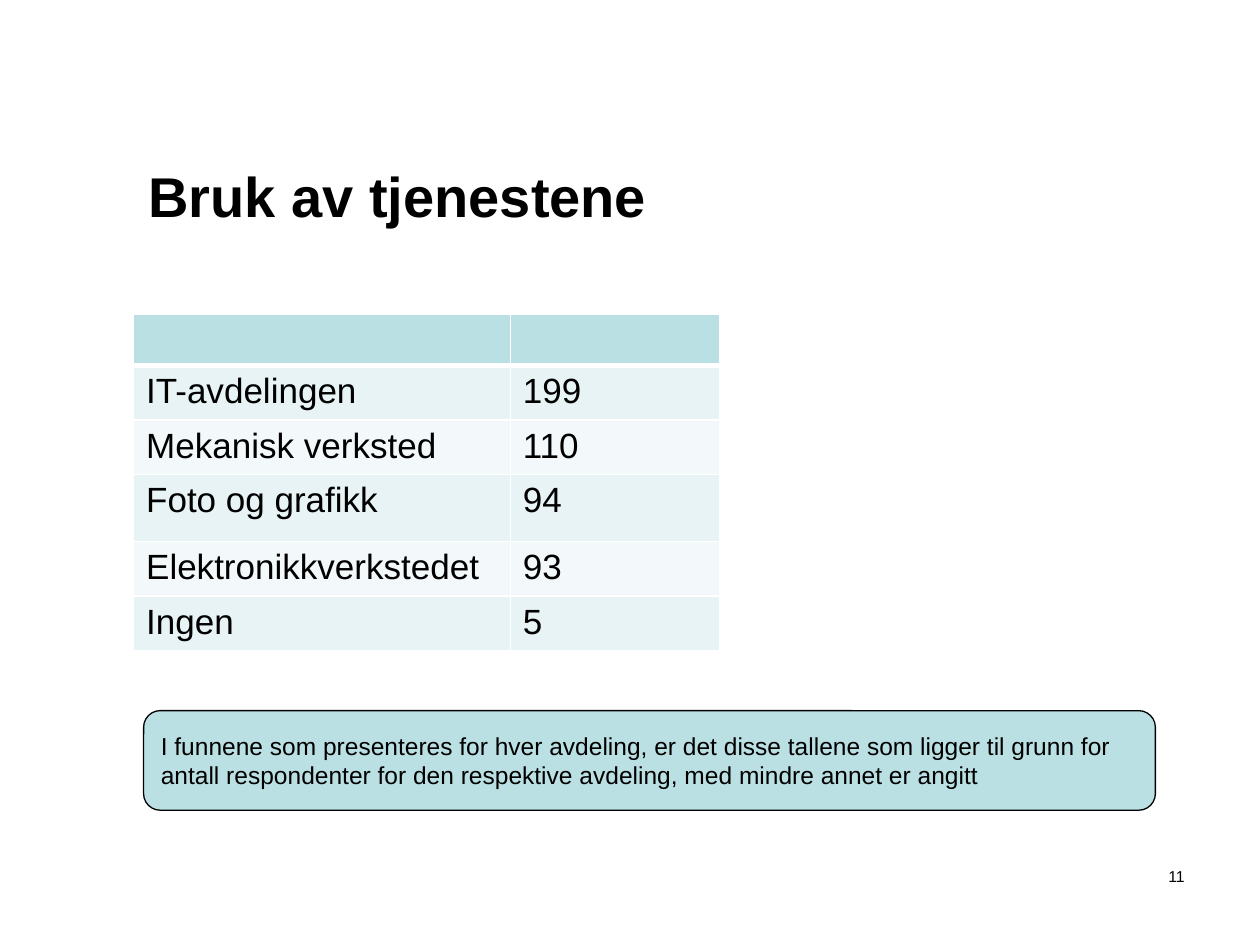
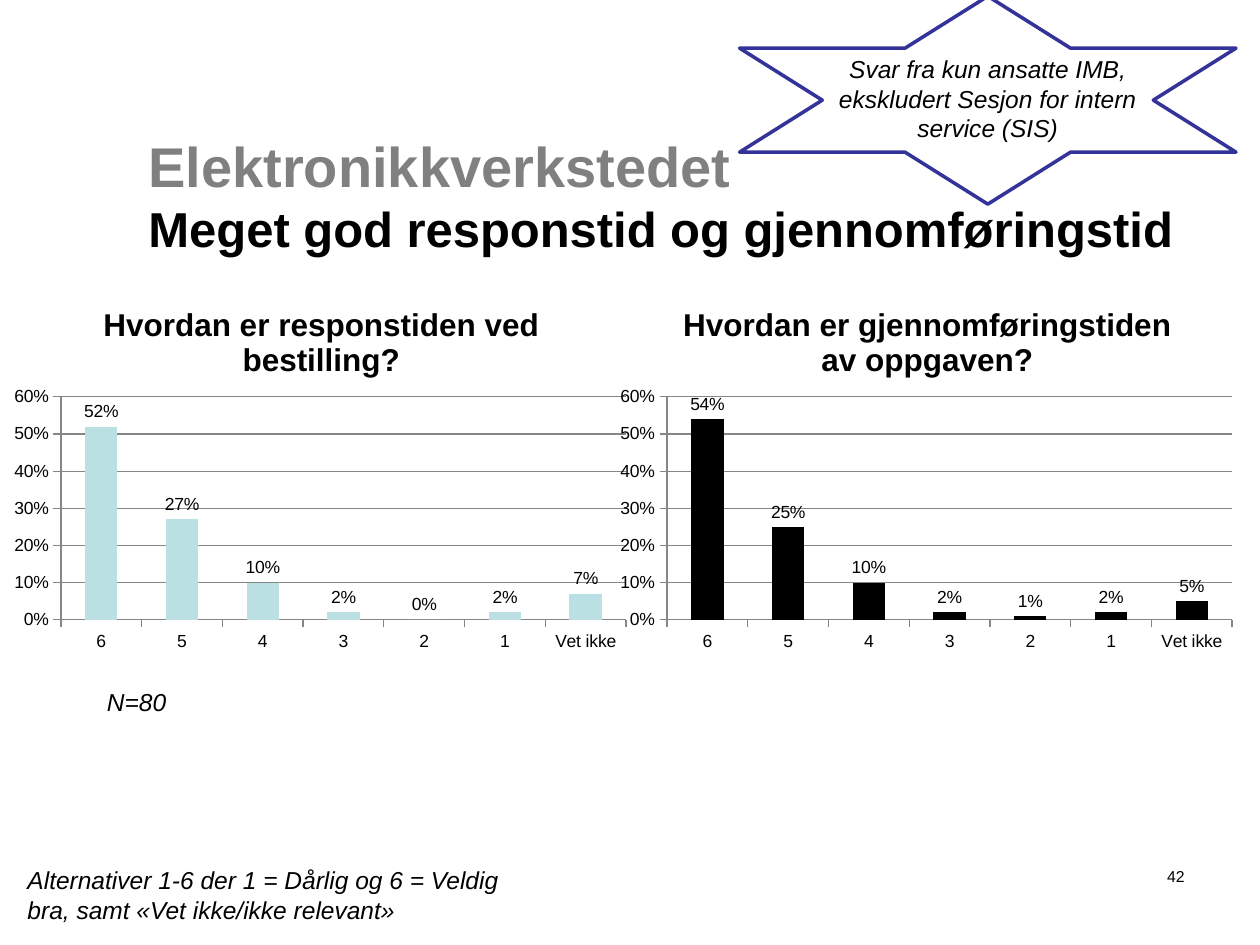
import pptx
import pptx.chart.data
import pptx.dml.color
import pptx.enum.chart
import pptx.enum.shapes
import pptx.enum.text
import pptx.oxml
import pptx.oxml.ns
import pptx.util
from pptx.util import Inches

BLACK = pptx.dml.color.RGBColor(0x00, 0x00, 0x00)
WHITE = pptx.dml.color.RGBColor(0xFF, 0xFF, 0xFF)
GREY = pptx.dml.color.RGBColor(0x80, 0x80, 0x80)
AXIS_GREY = pptx.dml.color.RGBColor(0x86, 0x86, 0x86)
TEAL = pptx.dml.color.RGBColor(0xBB, 0xE0, 0xE3)
TEAL_LIGHT = pptx.dml.color.RGBColor(0xE7, 0xF3, 0xF4)
TEAL_PALE = pptx.dml.color.RGBColor(0xF3, 0xF9, 0xFA)
INDIGO = pptx.dml.color.RGBColor(0x33, 0x33, 0x99)
FONT = "Arial"

ALIGN = pptx.enum.text.PP_ALIGN
ANCHOR = pptx.enum.text.MSO_ANCHOR
SHAPE = pptx.enum.shapes.MSO_SHAPE


def add_span(para, text, size, color=BLACK, bold=False, italic=False):
    span = para.add_run()
    span.text = text
    span.font.name = FONT
    span.font.size = pptx.util.Pt(size)
    span.font.color.rgb = color
    span.font.bold = bold
    span.font.italic = italic


def add_box(page, place, align=ALIGN.LEFT, anchor=ANCHOR.TOP, preset=None, fill=None, line=None, weight=1):
    bounds = [Inches(length) for length in place]
    if preset is None:
        box = page.shapes.add_textbox(*bounds)
    else:
        box = page.shapes.add_shape(preset, *bounds)
        box.shadow.inherit = False
        box.fill.solid()
        box.fill.fore_color.rgb = fill
        box.line.color.rgb = line
        box.line.width = pptx.util.Pt(weight)
    box.text_frame.word_wrap = True
    box.text_frame.vertical_anchor = anchor
    para = box.text_frame.paragraphs[0]
    para.alignment = align
    return para


deck = pptx.Presentation()
deck.slide_width = Inches(10)
deck.slide_height = Inches(7.5)

pages = []
for number, title_lines in [
    ("11", [("Bruk av tjenestene", 32, BLACK)]),
    ("42", [("Elektronikkverkstedet", 32, GREY), ("Meget god responstid og gjennomføringstid", 28, BLACK)]),
]:
    page = deck.slides.add_slide(deck.slide_layouts[6])
    title = add_box(page, (1.08, 0.92, 8.42, 1.25), anchor=ANCHOR.MIDDLE)
    for index, (text, size, color) in enumerate(title_lines):
        if index:
            title.add_line_break()
        add_span(title, text, size, color, bold=True)
    add_span(add_box(page, (8.75, 6.83, 0.75, 0.5), ALIGN.RIGHT), number, 9)
    pages.append(page)
usage_page, response_page = pages

usage = [
    ("", ""),
    ("IT-avdelingen", "199"),
    ("Mekanisk verksted", "110"),
    ("Foto og grafikk", "94"),
    ("Elektronikkverkstedet", "93"),
    ("Ingen", "5"),
]
table = usage_page.shapes.add_table(
    len(usage), 2, Inches(1.06), Inches(2.49), Inches(4.65), Inches(2.58)
).table
for column, width in zip(table.columns, (2.99, 1.66)):
    column.width = Inches(width)
for row_index, row in enumerate(usage):
    table.rows[row_index].height = Inches(0.53 if row_index == 3 else 0.41)
    if row_index == 0:
        row_fill = TEAL
    else:
        row_fill = TEAL_LIGHT if row_index % 2 else TEAL_PALE
    for column_index, text in enumerate(row):
        cell = table.cell(row_index, column_index)
        properties = cell._tc.get_or_add_tcPr()
        for side in "LRTB":
            thick = (row_index, side) in [(0, "B"), (1, "T")]
            properties.append(pptx.oxml.parse_xml(
                f'<a:ln{side} {pptx.oxml.ns.nsdecls("a")} w="{pptx.util.Pt(3 if thick else 1)}">'
                f'<a:solidFill><a:srgbClr val="{WHITE}"/></a:solidFill></a:ln{side}>'
            ))
        cell.fill.solid()
        cell.fill.fore_color.rgb = row_fill
        if text:
            add_span(cell.text_frame.paragraphs[0], text, 20)

note = add_box(usage_page, (1.14, 5.64, 8.03, 0.79), anchor=ANCHOR.MIDDLE,
               preset=SHAPE.ROUNDED_RECTANGLE, fill=TEAL, line=BLACK, weight=0.75)
add_span(note, "I funnene som presenteres for hver avdeling, er det disse tallene som ligger til grunn "
               "for antall respondenter for den respektive avdeling, med mindre annet er angitt", 14)

star = add_box(response_page, (5.87, -0.03, 3.94, 1.65), ALIGN.CENTER,
               preset=SHAPE.STAR_6_POINT, fill=WHITE, line=INDIGO, weight=2)
add_span(star, "Svar fra kun ansatte IMB, ekskludert Sesjon for intern service (SIS)", 14, italic=True)

scale_note = add_box(response_page, (0.12, 6.82, 3.94, 0.57))
add_span(scale_note, "Alternativer 1-6 der 1 = Dårlig og 6 = Veldig bra, samt «Vet ikke/ikke relevant»", 14, italic=True)

for left, question, bar_color, shares in [
    (0.03, "Hvordan er responstiden ved bestilling?", TEAL, (0.52, 0.27, 0.1, 0.02, 0, 0.02, 0.07)),
    (4.84, "Hvordan er gjennomføringstiden av oppgaven?", BLACK, (0.54, 0.25, 0.1, 0.02, 0.01, 0.02, 0.05)),
]:
    chart_data = pptx.chart.data.CategoryChartData(number_format="0%")
    chart_data.categories = ["6", "5", "4", "3", "2", "1", "Vet ikke"]
    chart_data.add_series("Series 1", shares)
    chart = response_page.shapes.add_chart(
        pptx.enum.chart.XL_CHART_TYPE.COLUMN_CLUSTERED,
        Inches(left), Inches(2.25), Inches(5.04), Inches(3), chart_data,
    ).chart
    chart.font.name = FONT
    chart.font.size = pptx.util.Pt(10)
    chart.font.color.rgb = BLACK
    chart.has_legend = False
    chart.has_title = True
    add_span(chart.chart_title.text_frame.paragraphs[0], question, 18, bold=True)

    plot_area = chart._chartSpace.chart.plotArea
    for layout in plot_area.findall(pptx.oxml.ns.qn("c:layout")):
        plot_area.remove(layout)
    plot_area.insert(0, pptx.oxml.parse_xml(
        f'<c:layout {pptx.oxml.ns.nsdecls("c")}><c:manualLayout><c:layoutTarget val="inner"/>'
        '<c:xMode val="edge"/><c:yMode val="edge"/><c:x val="0.09"/><c:y val="0.3"/>'
        '<c:w val="0.89"/><c:h val="0.59"/></c:manualLayout></c:layout>'
    ))

    for axis in (chart.category_axis, chart.value_axis):
        axis.major_tick_mark = pptx.enum.chart.XL_TICK_MARK.OUTSIDE
        axis.format.line.color.rgb = AXIS_GREY
    chart.value_axis.minimum_scale = 0
    chart.value_axis.maximum_scale = 0.6
    chart.value_axis.major_unit = 0.1
    chart.value_axis.has_major_gridlines = True
    chart.value_axis.major_gridlines.format.line.color.rgb = AXIS_GREY
    chart.value_axis.tick_labels.number_format = "0%"
    chart.value_axis.tick_labels.number_format_is_linked = False

    plot = chart.plots[0]
    plot.gap_width = 150
    plot.vary_by_categories = False
    plot.series[0].format.fill.solid()
    plot.series[0].format.fill.fore_color.rgb = bar_color
    plot.has_data_labels = True
    plot.data_labels.show_value = True
    plot.data_labels.number_format = "0%"
    plot.data_labels.number_format_is_linked = False
    plot.data_labels.position = pptx.enum.chart.XL_LABEL_POSITION.OUTSIDE_END

add_span(add_box(response_page, (0.75, 5.4, 2.68, 0.34)), "N=80", 14, italic=True)

deck.save("out.pptx")
